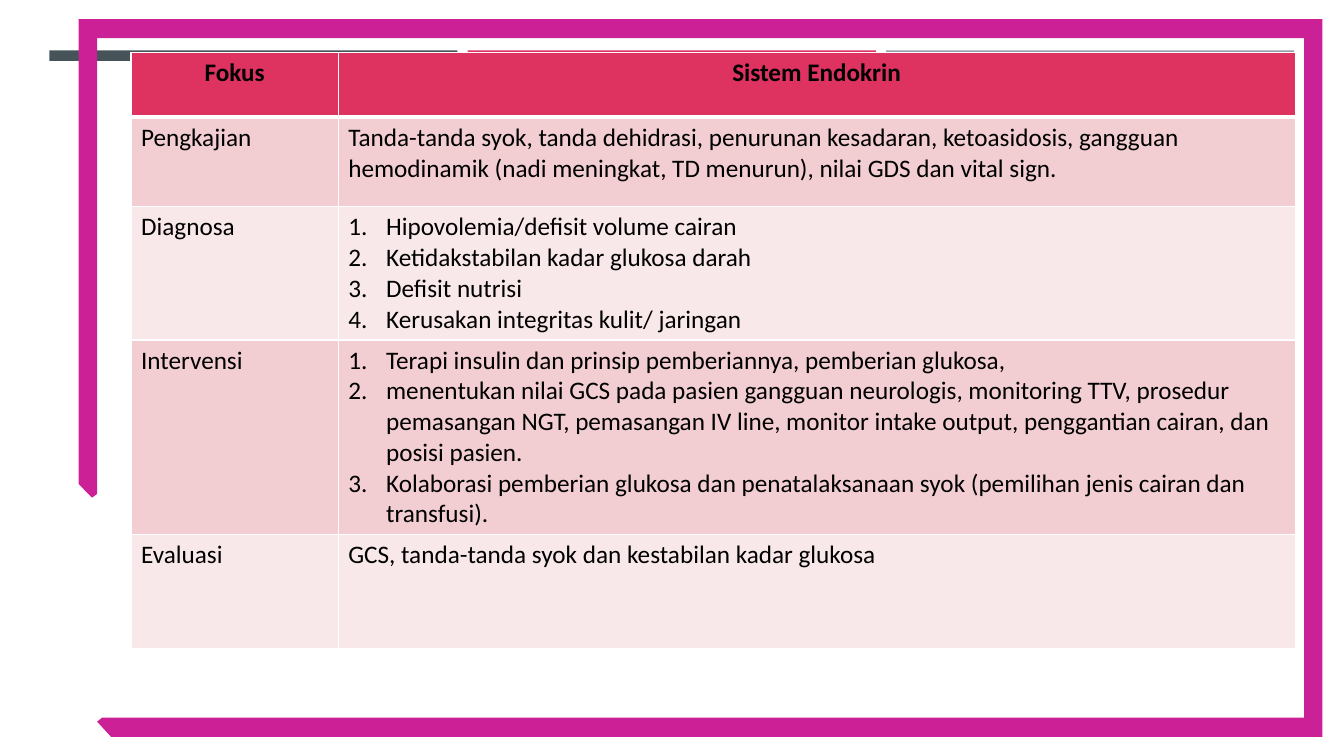
"""Build the endocrine nursing focus slide."""
from dataclasses import dataclass

from lxml import etree
from pptx import Presentation
from pptx.dml.color import RGBColor
from pptx.enum.shapes import MSO_SHAPE
from pptx.enum.text import PP_ALIGN
from pptx.oxml.ns import qn
from pptx.util import Pt

RECT = MSO_SHAPE.RECTANGLE
LEFT, CENTER = PP_ALIGN.LEFT, PP_ALIGN.CENTER
BLANK = 6
FONT, SIZE, INDENT = "Calibri", 18, 27
WHITE, BLACK, RED, PINK = "FFFFFF", "000000", "DE3261", "CC2097"
ROSE, BLUSH = "F2CED2", "F9E8EA"
THIN, THICK = 1, 3
COLS = (148, 683.5)


@dataclass
class Bar:
    left: float
    height: float
    color: str


@dataclass
class Row:
    height: float
    fill: str
    label: str
    lines: tuple[str, ...]
    head: bool = False
    top: float = THIN


BARS = (
    Bar(35.2, 7.5, "465359"),
    Bar(632.9, 7.6, "969FA7"),
    Bar(334, 7.5, RED),
)
FRAME = (
    (56.2, 13.7), (944.6, 13.7), (944.6, 526.4), (79.4, 526.4),
    (69.4, 515.5), (72.9, 512.6), (931.5, 512.6), (931.5, 27.2),
    (69.4, 27.2), (69.4, 352.8), (65.7, 355.5), (56.2, 345.8),
)
ROWS = (
    Row(46, RED, "Fokus", ("Sistem Endokrin",), head=True),
    Row(64, ROSE, "Pengkajian", (
        "Tanda-tanda syok, tanda dehidrasi, penurunan kesadaran, ketoasidosis, "
        "gangguan hemodinamik (nadi meningkat, TD menurun), nilai GDS dan vital sign.",
    ), top=THICK),
    Row(95, BLUSH, "Diagnosa", (
        "Hipovolemia/defisit volume cairan",
        "Ketidakstabilan kadar glukosa darah",
        "Defisit nutrisi",
        "Kerusakan integritas kulit/ jaringan",
    )),
    Row(138.5, ROSE, "Intervensi", (
        "Terapi insulin dan prinsip pemberiannya, pemberian glukosa,",
        "menentukan nilai GCS pada pasien gangguan neurologis, monitoring TTV, "
        "prosedur pemasangan NGT, pemasangan IV line, monitor intake output, "
        "penggantian cairan, dan posisi pasien.",
        "Kolaborasi pemberian glukosa dan penatalaksanaan syok "
        "(pemilihan jenis cairan dan transfusi).",
    )),
    Row(81.5, BLUSH, "Evaluasi", (
        "GCS, tanda-tanda syok dan kestabilan kadar glukosa",
    )),
)


def paint(item, color: str) -> None:
    item.fill.solid()
    item.fill.fore_color.rgb = RGBColor.from_string(color)


def finish(shape, color: str) -> None:
    paint(shape, color)
    shape.line.fill.background()
    shape.shadow.inherit = False


def draw_bar(slide, bar: Bar) -> None:
    shape = slide.shapes.add_shape(
        RECT, Pt(bar.left), Pt(36), Pt(291.6), Pt(bar.height))
    finish(shape, bar.color)


def draw_frame(slide) -> None:
    dots = [(Pt(x), Pt(y)) for x, y in FRAME]
    pen = slide.shapes.build_freeform(*dots[0])
    pen.add_line_segments(dots[1:], close=True)
    finish(pen.convert_to_shape(), PINK)


def edge(cell, row: Row) -> None:
    props = cell._tc.get_or_add_tcPr()
    base = THICK if row.head else THIN
    sides = (("lnL", THIN), ("lnR", THIN), ("lnT", row.top), ("lnB", base))
    for spot, (tag, width) in enumerate(sides):
        line = etree.Element(qn(f"a:{tag}"), w=str(Pt(width)))
        fill = etree.SubElement(line, qn("a:solidFill"))
        etree.SubElement(fill, qn("a:srgbClr"), val=WHITE)
        props.insert(spot, line)


def number(para) -> None:
    props = para._p.get_or_add_pPr()
    props.set("marL", str(Pt(INDENT)))
    props.set("indent", str(-Pt(INDENT)))
    etree.SubElement(props, qn("a:buFont"), typeface="+mj-lt")
    etree.SubElement(props, qn("a:buAutoNum"), type="arabicPeriod")


def write(cell, lines: tuple[str, ...], row: Row) -> None:
    frame = cell.text_frame
    for spot, line in enumerate(lines):
        para = frame.add_paragraph() if spot else frame.paragraphs[0]
        para.alignment = CENTER if row.head else LEFT
        if len(lines) > 1:
            number(para)
        run = para.add_run()
        run.text = line
        run.font.name = FONT
        run.font.size = Pt(SIZE)
        run.font.bold = row.head
        run.font.color.rgb = RGBColor.from_string(BLACK)
    paint(cell, row.fill)
    edge(cell, row)


def draw_table(slide) -> None:
    table = slide.shapes.add_table(
        len(ROWS), len(COLS), Pt(93.6), Pt(37.8), Pt(sum(COLS)),
        Pt(sum(row.height for row in ROWS))).table
    table.horz_banding = False
    for col, width in zip(table.columns, COLS):
        col.width = Pt(width)
    for spot, row in enumerate(ROWS):
        table.rows[spot].height = Pt(row.height)
        write(table.cell(spot, 0), (row.label,), row)
        write(table.cell(spot, 1), row.lines, row)


def main() -> None:
    deck = Presentation()
    deck.slide_width, deck.slide_height = Pt(960), Pt(540)
    slide = deck.slides.add_slide(deck.slide_layouts[BLANK])
    paint(slide.background, WHITE)
    for bar in BARS:
        draw_bar(slide, bar)
    draw_frame(slide)
    draw_table(slide)
    deck.save("out.pptx")


if __name__ == "__main__":
    main()
